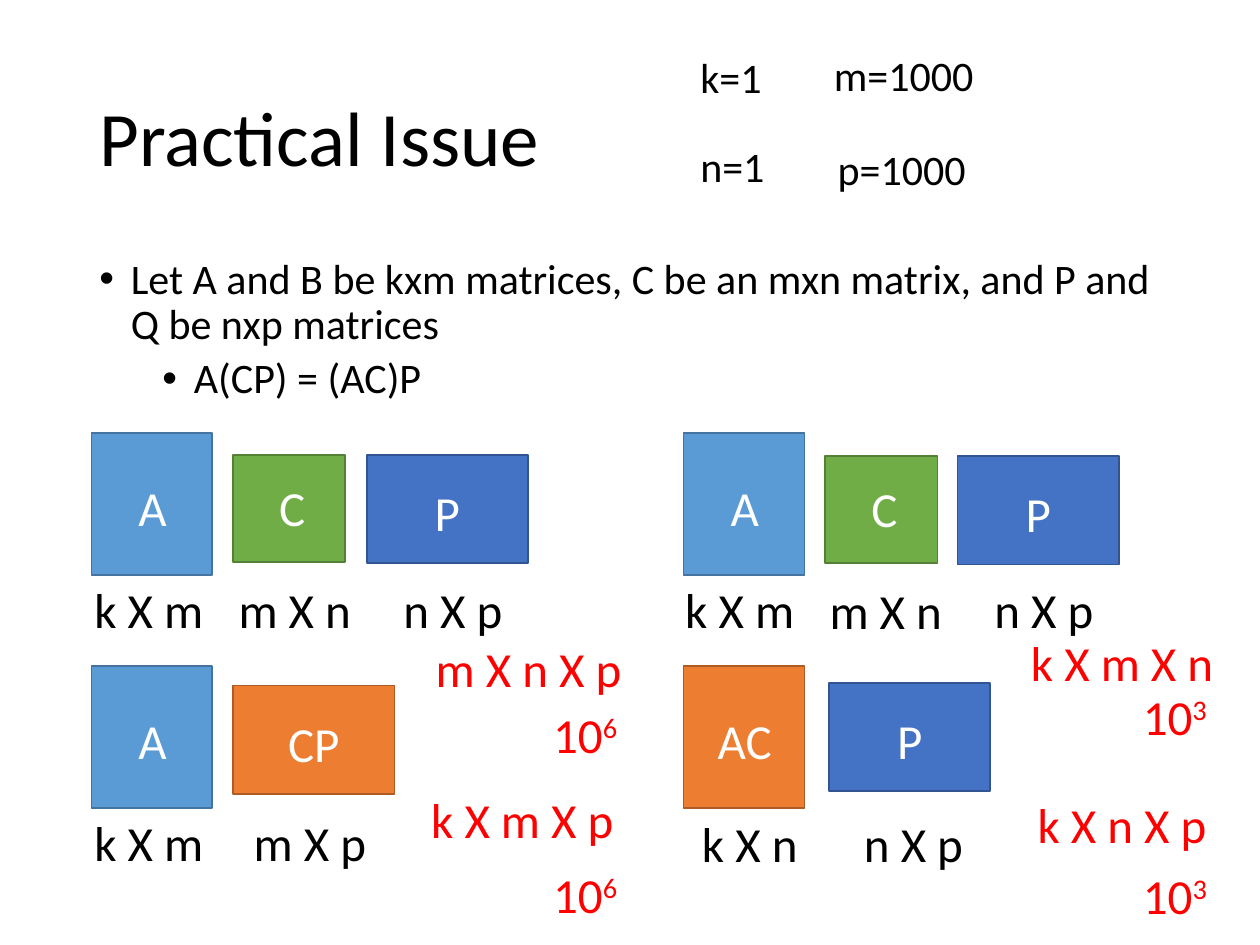
from pptx import Presentation
from pptx import util as u
from pptx.dml.color import RGBColor
from pptx.enum import shapes, text
from pptx.oxml import parse_xml
from pptx.oxml.ns import nsdecls

BLACK = RGBColor(0x00, 0x00, 0x00)
WHITE = RGBColor(0xFF, 0xFF, 0xFF)
RED = RGBColor(0xFF, 0x00, 0x00)
SKY, SKY_EDGE = RGBColor(0x5B, 0x9B, 0xD5), RGBColor(0x43, 0x73, 0x9E)
GREEN, GREEN_EDGE = RGBColor(0x70, 0xAD, 0x47), RGBColor(0x53, 0x80, 0x35)
BLUE, BLUE_EDGE = RGBColor(0x44, 0x72, 0xC4), RGBColor(0x32, 0x54, 0x91)
ORANGE, ORANGE_EDGE = RGBColor(0xED, 0x7D, 0x31), RGBColor(0xAF, 0x5C, 0x24)


def add_span(para, words, size, color, raised=False):
    span = para.add_run()
    span.text = words
    for name, value in {"name": "Calibri", "size": u.Pt(size)}.items():
        setattr(span.font, name, value)
    span.font.color.rgb = color
    if raised:
        span._r.get_or_add_rPr().set("baseline", "30000")


def add_label(parent, words, left, top, width, height=0.57, size=28,
              color=BLACK, align=text.PP_ALIGN.CENTER, power=""):
    box = parent.add_textbox(*map(u.Inches, (left, top, width, height)))
    frame = box.text_frame
    frame.word_wrap = True
    frame.auto_size = text.MSO_AUTO_SIZE.SHAPE_TO_FIT_TEXT
    para = frame.paragraphs[0]
    para.alignment = align
    add_span(para, words, size, color)
    if power:
        add_span(para, power, size, color, raised=True)


deck = Presentation()
deck.slide_width, deck.slide_height = u.Inches(10), u.Inches(7.5)
page = deck.slides.add_slide(deck.slide_layouts[5])

# Title
title = page.shapes.title
for name, value in {"left": 0.69, "top": 0.4, "width": 8.62, "height": 1.45}.items():
    setattr(title, name, u.Inches(value))
title.text_frame.auto_size = text.MSO_AUTO_SIZE.NONE
title.text_frame.vertical_anchor = text.MSO_ANCHOR.MIDDLE
para = title.text_frame.paragraphs[0]
para.alignment = text.PP_ALIGN.LEFT
para.line_spacing = 0.9
add_span(para, "Practical Issue", 44, BLACK)

# Bulleted statement
body = page.shapes.add_textbox(*map(u.Inches, (0.69, 2, 8.62, 4.76)))
body.text_frame.word_wrap = True
bullets = [
    ("Let A and B be kxm matrices, C be an mxn matrix, and P and Q be nxp matrices", 0, 0.25, 10),
    ("A(CP) = (AC)P", 1, 0.75, 5),
]
for words, level, indent, before in bullets:
    para = body.text_frame.paragraphs[0] if level == 0 else body.text_frame.add_paragraph()
    for name, value in {"level": level, "line_spacing": 0.9, "space_before": u.Pt(before)}.items():
        setattr(para, name, value)
    props = para._p.get_or_add_pPr()
    props.set("marL", str(u.Inches(indent)))
    props.set("indent", str(u.Inches(-0.25)))
    props.append(parse_xml(f'<a:buFont {nsdecls("a")} typeface="Arial"/>'))
    props.append(parse_xml(f'<a:buChar {nsdecls("a")} char="•"/>'))
    add_span(para, words, 24, BLACK)

# Example dimensions
for words, left, top, width in [
    ("k=1", 5.46, 0.36, 1.16), ("m=1000", 6.52, 0.34, 1.74),
    ("n=1", 5.46, 1.07, 1.27), ("p=1000", 6.55, 1.09, 1.26),
]:
    add_label(page.shapes, words, left, top, width, 0.5, 24, align=text.PP_ALIGN.LEFT)

# Matrix kinds: width, height, rotation, label offset
TALL = (1.13, 0.96, 90, 0.15, 0.22)
SMALL = (0.89, 0.85, 0, 0.05, 0.13)
WIDE = (1.28, 0.86, 180, 0.22, 0.17)

# Matrices, the factors on top and the first product below
matrices = [
    ("A", 0.64, 3.52, TALL, SKY, SKY_EDGE),
    ("C", 1.85, 3.61, SMALL, GREEN, GREEN_EDGE),
    ("P", 2.91, 3.61, WIDE, BLUE, BLUE_EDGE),
    ("A", 0.64, 5.37, TALL, SKY, SKY_EDGE),
    ("CP", 1.85, 5.44, WIDE, ORANGE, ORANGE_EDGE),
    ("A", 5.34, 3.52, TALL, SKY, SKY_EDGE),
    ("C", 6.55, 3.62, SMALL, GREEN, GREEN_EDGE),
    ("P", 7.6, 3.62, WIDE, BLUE, BLUE_EDGE),
    ("AC", 5.34, 5.37, TALL, ORANGE, ORANGE_EDGE),
    ("P", 6.58, 5.42, WIDE, BLUE, BLUE_EDGE),
]
for words, left, top, kind, fill, edge in matrices:
    width, height, rotation, shift, drop = kind
    group = page.shapes.add_group_shape()
    block = group.shapes.add_shape(shapes.MSO_SHAPE.FLOWCHART_PROCESS,
                                   *map(u.Inches, (left, top, width, height)))
    block.rotation = rotation
    block.shadow.inherit = False
    block.fill.solid()
    block.fill.fore_color.rgb = fill
    block.line.color.rgb = edge
    block.line.width = u.Pt(1)
    add_label(group.shapes, words, left + shift, top + drop, 0.84, color=WHITE)

# Matrix sizes
for words, left, top, width in [
    ("k X m", 0.47, 4.55, 1.42), ("m X n", 1.61, 4.55, 1.46), ("n X p", 3.03, 4.55, 1.13),
    ("k X m", 0.47, 6.4, 1.42), ("m X p", 1.73, 6.4, 1.46),
    ("k X m", 5.16, 4.55, 1.42), ("m X n", 6.3, 4.56, 1.46), ("n X p", 7.72, 4.55, 1.13),
    ("k X n", 5.24, 6.41, 1.42), ("n X p", 6.52, 6.41, 1.46),
]:
    add_label(page.shapes, words, left, top, width)

# Operation counts
for words, power, left, top, width in [
    ("m X n X p", "", 3.18, 5.02, 2.03), ("10", "6", 3.63, 5.54, 2.03),
    ("k X m X p", "", 3.13, 6.22, 2.03), ("10", "6", 3.63, 6.81, 2.03),
    ("k X m X n", "", 7.89, 4.97, 2.03), ("10", "3", 8.31, 5.4, 2.03),
    ("k X n X p", "", 7.89, 6.26, 2.03), ("10", "3", 8.8, 6.82, 1.05),
]:
    add_label(page.shapes, words, left, top, width, color=RED, power=power)

deck.save("out.pptx")
